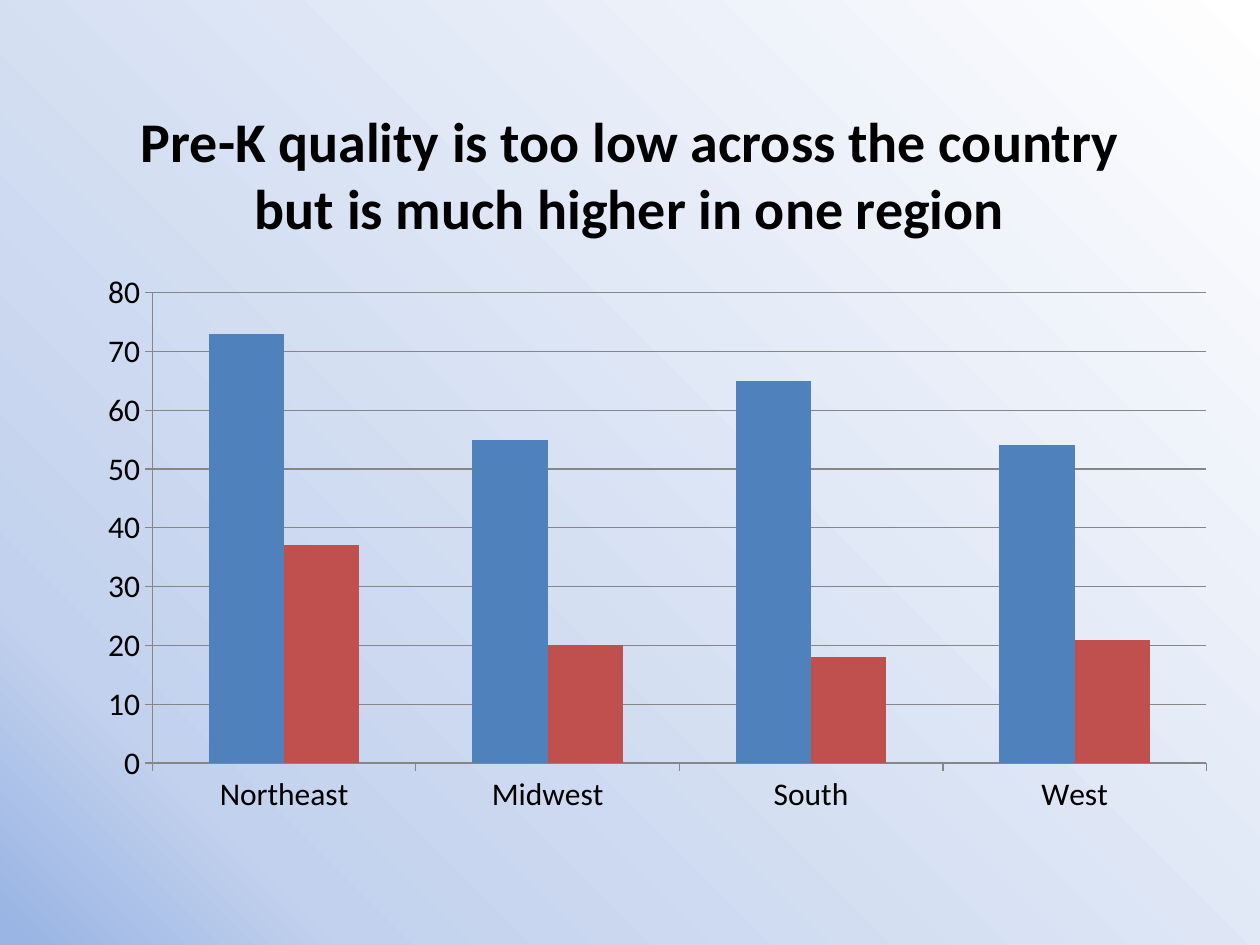
from copy import deepcopy
from dataclasses import dataclass

from pptx import Presentation
from pptx.chart.data import CategoryChartData
from pptx.dml.color import RGBColor as RGB
from pptx.enum.chart import XL_CHART_TYPE as CT, XL_TICK_MARK as TM
from pptx.enum.text import MSO_ANCHOR as ANCHOR, PP_ALIGN as ALIGN
from pptx.oxml import parse_xml
from pptx.oxml.ns import nsdecls, qn
from pptx.util import Pt

PX = 9144


@dataclass(frozen=True)
class Theme:
    font: str = "Calibri"
    text: str = "000000"
    line: str = "868686"
    series: tuple = ("4F81BD", "C0504D")
    gradient: tuple = ((0.01, "9AB5E4"), (0.16, "C2D1ED"), (1, "FFFFFF"))
    title_size: int = 32
    chart_size: int = 18


class SlideBuilder:
    def __init__(self, prs, theme):
        self.theme = theme
        self.s = prs.slides.add_slide(prs.slide_layouts[6])

    def style_font(self, font, size, bold=False):
        font.name = self.theme.font
        font.size = Pt(size)
        font.bold = bold
        font.color.rgb = RGB.from_string(self.theme.text)

    def background(self, angle):
        fill = self.s.background.fill
        fill.gradient()
        fill.gradient_angle = angle
        stops = next(self.s.element.iter(qn("a:gsLst")))
        stops.append(deepcopy(stops[-1]))
        for stop, (position, color) in zip(fill.gradient_stops, self.theme.gradient):
            stop.position = position
            stop.color.rgb = RGB.from_string(color)

    def title(self, text, x, y, w, h):
        tf = self.s.shapes.add_textbox(x * PX, y * PX, w * PX, h * PX).text_frame
        tf.word_wrap = True
        tf.vertical_anchor = ANCHOR.MIDDLE
        tf.text = text
        p = tf.paragraphs[0]
        p.alignment = ALIGN.CENTER
        for r in p.runs:
            self.style_font(r.font, self.theme.title_size, bold=True)

    def style_line(self, line):
        line.color.rgb = RGB.from_string(self.theme.line)
        line.width = Pt(0.75)

    def column_chart(self, categories, series, x, y, w, h, plot_area):
        data = CategoryChartData(number_format="0")
        data.categories = categories
        for values in series:
            data.add_series("", values)
        chart = self.s.shapes.add_chart(
            CT.COLUMN_CLUSTERED, x * PX, y * PX, w * PX, h * PX, data
        ).chart
        chart.has_title = False
        chart.has_legend = False
        self.style_font(chart.font, self.theme.chart_size)

        plot = chart.plots[0]
        plot.gap_width = 150
        plot.overlap = 0
        plot.vary_by_categories = False
        for ser, color in zip(plot.series, self.theme.series):
            ser.format.fill.solid()
            ser.format.fill.fore_color.rgb = RGB.from_string(color)

        for axis in (chart.category_axis, chart.value_axis):
            axis.major_tick_mark = TM.OUTSIDE
            axis.minor_tick_mark = TM.NONE
            self.style_line(axis.format.line)
        axis = chart.value_axis
        axis.minimum_scale, axis.maximum_scale, axis.major_unit = 0, 80, 10
        axis.has_major_gridlines = True
        self.style_line(axis.major_gridlines.format.line)
        axis.tick_labels.number_format = "0"
        axis.tick_labels.number_format_is_linked = False
        self.place_plot(chart, plot_area)

    def place_plot(self, chart, plot_area):
        sizes = "".join(
            f'<c:{tag} val="{value}"/>' for tag, value in zip("xywh", plot_area)
        )
        layout = parse_xml(
            f'<c:layout {nsdecls("c")}><c:manualLayout><c:layoutTarget val="inner"/>'
            f'<c:xMode val="edge"/><c:yMode val="edge"/>{sizes}'
            "</c:manualLayout></c:layout>"
        )
        area = next(chart.element.iter(qn("c:plotArea")))
        for old in area.findall(qn("c:layout")):
            area.remove(old)
        area.insert(0, layout)


def main():
    prs = Presentation()
    prs.slide_width, prs.slide_height = 1000 * PX, 750 * PX
    slide = SlideBuilder(prs, Theme())
    slide.background(angle=45)
    slide.title(
        "Pre-K quality is too low across the country\vbut is much higher in one region",
        50, 75, 900, 125,
    )
    slide.column_chart(
        ("Northeast", "Midwest", "South", "West"),
        ((73, 55, 65, 54), (37, 20, 18, 21)),
        58, 217, 900, 492,
        plot_area=(0.07, 0.03, 0.93, 0.76),
    )
    prs.save("out.pptx")


if __name__ == "__main__":
    main()
